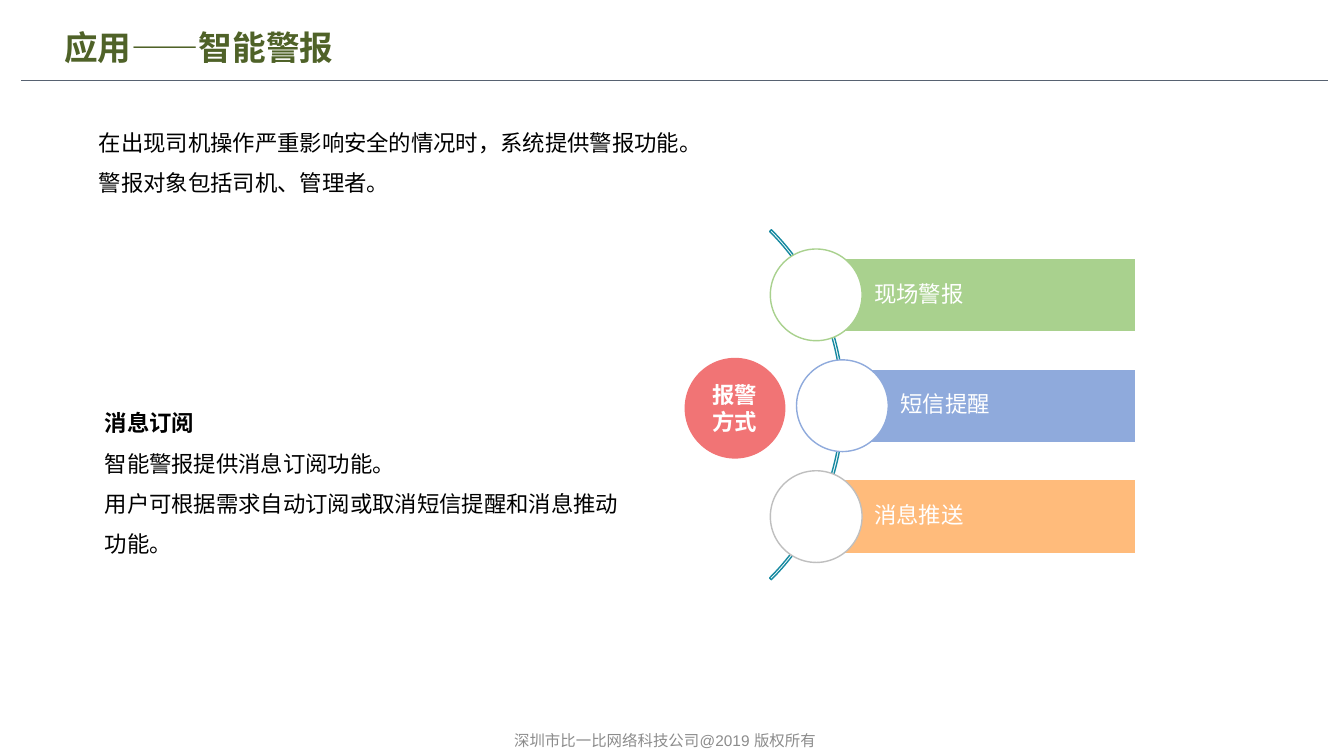
from lxml import etree
from pptx import Presentation
from pptx.dml.color import RGBColor
from pptx.enum.shapes import MSO_CONNECTOR, MSO_SHAPE
from pptx.enum.text import MSO_ANCHOR, PP_ALIGN
from pptx.oxml.ns import qn
from pptx.util import Pt

PX = 9144  # 100 px to the inch
OVAL, RECT, ARC = MSO_SHAPE.OVAL, MSO_SHAPE.RECTANGLE, MSO_SHAPE.BLOCK_ARC
LEFT, CENTER = PP_ALIGN.LEFT, PP_ALIGN.CENTER
TOP, MIDDLE = MSO_ANCHOR.TOP, MSO_ANCHOR.MIDDLE
THEME = {
    "font": "Arial", "title_size": 24, "body_size": 16, "footer_size": 11,
    "title": "4F6228", "body": "000000", "footer": "8C8C8C", "white": "FFFFFF",
    "rule": "576271", "arc": "1689A0", "hub": "F17475",
    "green": "A9D18E", "blue": "8FAADC", "orange": "FFBB7B", "grey": "BFBFBF",
}


def write(box, lines, size, color, bold_lines=0, align=LEFT, anchor=TOP,
          spacing=1.0, margins=(10, 5, 10, 5)):
    """Fill a shape with one paragraph per line; the first bold_lines are bold."""
    frame = box.text_frame
    left, top, right, bottom = (value * PX for value in margins)
    frame_format = {"word_wrap": True, "vertical_anchor": anchor,
                    "margin_left": left, "margin_top": top,
                    "margin_right": right, "margin_bottom": bottom}
    for name, value in frame_format.items():
        setattr(frame, name, value)
    for index, line in enumerate(lines):
        para = frame.paragraphs[0] if index == 0 else frame.add_paragraph()
        para.alignment, para.line_spacing = align, spacing
        span = para.add_run()
        span.text = line
        font_format = {"name": THEME["font"], "size": Pt(THEME[size]),
                       "bold": index < bold_lines}
        for name, value in font_format.items():
            setattr(span.font, name, value)
        span.font.color.rgb = RGBColor.from_string(THEME[color])


def add_figure(kind, left, top, width, height, fill=None, line=None):
    figure = page.shapes.add_shape(kind, left * PX, top * PX, width * PX, height * PX)
    figure.shadow.inherit = False
    if fill:
        figure.fill.solid()
        figure.fill.fore_color.rgb = RGBColor.from_string(THEME[fill])
    else:
        figure.fill.background()
    if line:
        figure.line.color.rgb = RGBColor.from_string(THEME[line])
        figure.line.width = Pt(1)
    else:
        figure.line.fill.background()
    return figure


deck = Presentation()
deck.slide_width, deck.slide_height = 1333 * PX, 750 * PX
page = deck.slides.add_slide(deck.slide_layouts[6])

# Header rule
rule = page.shapes.add_connector(MSO_CONNECTOR.STRAIGHT, 1317 * PX, 80 * PX, 21 * PX, 80 * PX)
rule.line.color.rgb = RGBColor.from_string(THEME["rule"])
rule.line.width = Pt(1)
etree.SubElement(rule.element.spPr, qn("a:effectLst"))

# Title, body texts and footer
texts = [
    ((54, 22, 384, 50), ["应用——智能警报"], "title_size", "title", {"bold_lines": 1}),
    ((54, 110, 1200, 86),
     ["在出现司机操作严重影响安全的情况时，系统提供警报功能。", "警报对象包括司机、管理者。"],
     "body_size", "body", {"spacing": 1.5, "margins": (44, 5, 10, 5)}),
    ((94, 388, 545, 165),
     ["消息订阅", "智能警报提供消息订阅功能。",
      "用户可根据需求自动订阅或取消短信提醒和消息推动功能。"],
     "body_size", "body", {"spacing": 1.5, "bold_lines": 1}),
    ((409, 723, 501, 24), ["深圳市比一比网络科技公司@2019 版权所有"],
     "footer_size", "footer", {"align": CENTER, "anchor": MIDDLE}),
]
for place, lines, size, color, options in texts:
    box = page.shapes.add_textbox(*(value * PX for value in place))
    write(box, lines, size, color, **options)

# Alarm diagram: hub, arc, then one bar with a circle for each method
hub = add_figure(OVAL, 679, 355, 100, 100, "hub")
write(hub, ["报警方式"], "body_size", "white", bold_lines=1, align=CENTER, anchor=MIDDLE)

arc = add_figure(ARC, 346, 156, 491, 491, line="arc")
for index, value in enumerate((189, 27, 0.005)):  # 315°, 45°, ring thickness
    arc.adjustments[index] = value

BAR_TOP, BAR_RIGHT, BAR_HEIGHT, ROW_STEP = 256, 1126, 73, 110
CIRCLE = 91
methods = [
    ("现场警报", 809, "green", "green"),
    ("短信提醒", 835, "blue", "blue"),
    ("消息推送", 809, "orange", "grey"),
]
for row, (label, left, fill, ring) in enumerate(methods):
    top = BAR_TOP + row * ROW_STEP
    bar = add_figure(RECT, left, top, BAR_RIGHT - left, BAR_HEIGHT, fill, "white")
    write(bar, [label], "body_size", "white", anchor=MIDDLE, spacing=0.9, margins=(58, 4, 4, 4))
    add_figure(OVAL, left - CIRCLE // 2, top + (BAR_HEIGHT - CIRCLE) // 2,
               CIRCLE, CIRCLE, "white", ring)

deck.save("out.pptx")
